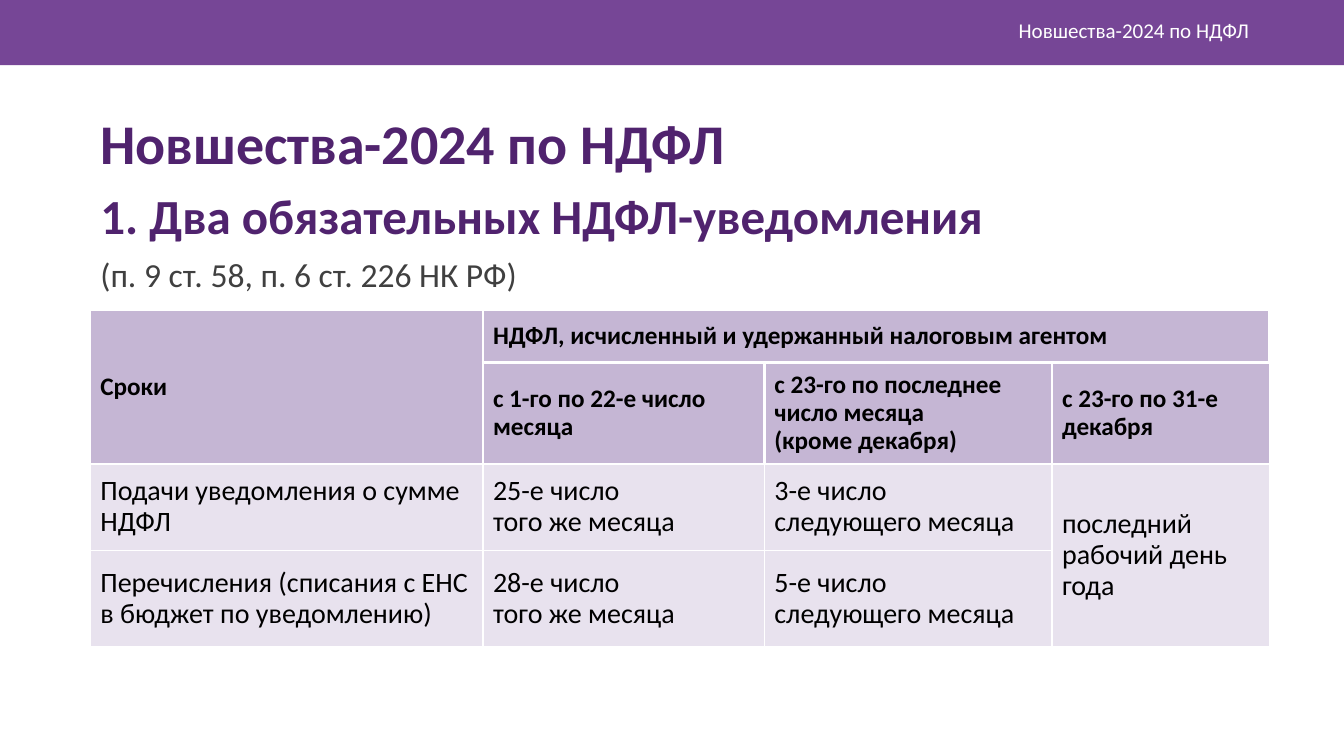
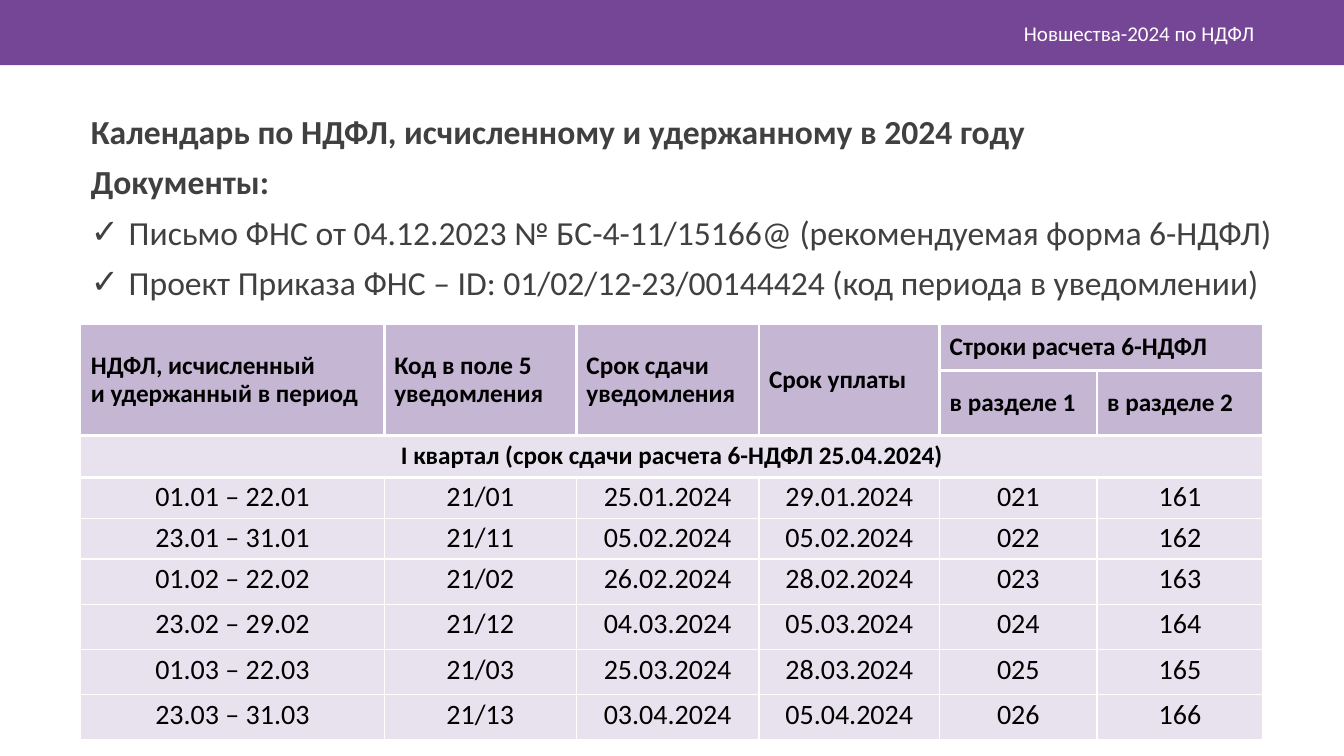
from dataclasses import dataclass

from lxml.etree import SubElement
from pptx import Presentation
from pptx.dml.color import RGBColor
from pptx.enum.shapes import MSO_SHAPE
from pptx.enum.text import MSO_ANCHOR, MSO_AUTO_SIZE, PP_ALIGN
from pptx.oxml.ns import qn
from pptx.util import Pt

PIXEL = 9525


@dataclass(frozen=True)
class TextStyle:
    """Size, colour and weight of one kind of text."""
    size: int
    color: str
    bold: bool = False


@dataclass(frozen=True)
class Theme:
    """Colours, type and line widths shared by the slides."""
    font: str = "Calibri"
    band: str = "764696"
    cell: str = "8D6FAB"
    border: str = "FFFFFF"
    header_opacity: int = 50
    body_opacity: int = 20
    thin: float = 1
    thick: float = 2.25
    line_spacing: float = 0.9
    paragraph_gap: int = 10
    running_head: TextStyle = TextStyle(15, "FFFFFF")
    title: TextStyle = TextStyle(40, "50236E", True)
    subtitle: TextStyle = TextStyle(35, "50236E", True)
    text: TextStyle = TextStyle(24, "404040")
    strong: TextStyle = TextStyle(24, "404040", True)
    table_head: TextStyle = TextStyle(18, "000000", True)
    table_body: TextStyle = TextStyle(20, "000000")


@dataclass(frozen=True)
class TableLayout:
    """Geometry and cell roles of one table."""
    left: int
    top: int
    columns: tuple
    rows: tuple
    merges: tuple
    bold_rows: int
    body_anchor: MSO_ANCHOR
    body_align: PP_ALIGN


THEME = Theme()
HEADER_ROWS = 2
HEADING = "Новшества-2024 по НДФЛ"

DEADLINES = (
    ("Сроки", "НДФЛ, исчисленный и удержанный налоговым агентом", "", ""),
    ("", "с 1-го по 22-е число месяца",
     "с 23-го по последнее число месяца\n(кроме декабря)", "с 23-го по 31-е декабря"),
    ("Подачи уведомления о сумме НДФЛ", "25-е число\vтого же месяца",
     "3-е число\vследующего месяца", "последний рабочий день года"),
    ("Перечисления (списания с ЕНС в бюджет по уведомлению)",
     "28-е число\vтого же месяца", "5-е число\vследующего месяца", ""),
)
DEADLINES_LAYOUT = TableLayout(
    86, 296, (374, 268, 274, 207), (49, 97, 82, 92),
    ((0, 0, 1, 0), (0, 1, 0, 3), (2, 3, 3, 3)),
    2, MSO_ANCHOR.MIDDLE, PP_ALIGN.LEFT)

CALENDAR = (
    ("НДФЛ, исчисленный\vи удержанный в период", "Код в поле 5 уведомления",
     "Срок сдачи уведомления", "Срок уплаты", "Строки расчета 6-НДФЛ", ""),
    ("", "", "", "", "в разделе 1", "в разделе 2"),
    ("I квартал (срок сдачи расчета 6-НДФЛ 25.04.2024)", "", "", "", "", ""),
    ("01.01 – 22.01", "21/01", "25.01.2024", "29.01.2024", "021", "161"),
    ("23.01 – 31.01", "21/11", "05.02.2024", "05.02.2024", "022", "162"),
    ("01.02 – 22.02", "21/02", "26.02.2024", "28.02.2024", "023", "163"),
    ("23.02 – 29.02", "21/12", "04.03.2024", "05.03.2024", "024", "164"),
    ("01.03 – 22.03", "21/03", "25.03.2024", "28.03.2024", "025", "165"),
    ("23.03 – 31.03", "21/13", "03.04.2024", "05.04.2024", "026", "166"),
)
CALENDAR_LAYOUT = TableLayout(
    77, 309, (289, 183, 174, 172, 150, 158), (44, 37, 40, 39, 39, 43, 43, 43, 43),
    (*((0, column, 1, column) for column in range(4)), (0, 4, 0, 5), (2, 0, 2, 5)),
    3, MSO_ANCHOR.TOP, PP_ALIGN.CENTER)


def px(*lengths):
    """Turn pixel lengths into EMU."""
    return [length * PIXEL for length in lengths]


def apply_format(target, **values):
    """Set several attributes of one object."""
    for name, value in values.items():
        setattr(target, name, value)


def format_paragraph(paragraph, style, **values):
    """Give a paragraph its spacing and its runs their type."""
    apply_format(paragraph, **values)
    for run in paragraph.runs:
        apply_format(run.font, name=THEME.font, size=Pt(style.size), bold=style.bold)
        run.font.color.rgb = RGBColor.from_string(style.color)


def set_bullet(paragraph, bulleted):
    """Switch the check mark of a paragraph on or off."""
    properties = paragraph._p.get_or_add_pPr()
    indent = 36 * PIXEL if bulleted else 0
    properties.set("marL", str(indent))
    properties.set("indent", str(-indent))
    if bulleted:
        SubElement(properties, qn("a:buFont"), typeface=THEME.font)
        SubElement(properties, qn("a:buChar"), char="✓")
    else:
        SubElement(properties, qn("a:buNone"))


def fill_placeholder(shape, box, lines):
    """Place a placeholder and write its styled lines."""
    apply_format(shape, **dict(zip(("left", "top", "width", "height"), px(*box))))
    frame = shape.text_frame
    apply_format(frame, word_wrap=True, auto_size=MSO_AUTO_SIZE.NONE,
                 vertical_anchor=MSO_ANCHOR.TOP)
    frame.text = "\n".join(text for text, style, bulleted in lines)
    for index, (text, style, bulleted) in enumerate(lines):
        paragraph = frame.paragraphs[index]
        set_bullet(paragraph, bulleted)
        format_paragraph(paragraph, style, alignment=PP_ALIGN.LEFT,
                         line_spacing=THEME.line_spacing,
                         space_before=Pt(THEME.paragraph_gap if index else 0))


def add_band(slide):
    """Draw the band along the top edge."""
    band = slide.shapes.add_shape(MSO_SHAPE.RECTANGLE, *px(0, 0, 1280, 62))
    band.shadow.inherit = False
    band.fill.solid()
    band.fill.fore_color.rgb = RGBColor.from_string(THEME.band)
    band.line.fill.background()


def add_running_head(slide, left, top):
    """Write the topic at the right of the band."""
    frame = slide.shapes.add_textbox(*px(left, top, 852, 38)).text_frame
    apply_format(frame, word_wrap=True, vertical_anchor=MSO_ANCHOR.MIDDLE, text=HEADING)
    format_paragraph(frame.paragraphs[0], THEME.running_head, alignment=PP_ALIGN.RIGHT)


def paint_cell(cell, widths, opacity):
    """Draw the borders and the translucent fill of a cell."""
    properties = cell._tc.get_or_add_tcPr()
    for side, width in widths.items():
        line = SubElement(properties, qn(f"a:ln{side}"), w=str(Pt(width)))
        SubElement(SubElement(line, qn("a:solidFill")), qn("a:srgbClr"), val=THEME.border)
    cell.fill.solid()
    cell.fill.fore_color.rgb = RGBColor.from_string(THEME.cell)
    color = properties.find(qn("a:solidFill"))[0]
    SubElement(color, qn("a:alpha"), val=str(opacity * 1000))


def border_widths(row, column, layout):
    """Make inner borders of the bold rows thick and all others thin."""
    bold = row < layout.bold_rows
    thick_sides = {
        "L": bold and column > 0,
        "R": bold and column < len(layout.columns) - 1,
        "T": 0 < row <= layout.bold_rows,
        "B": bold,
    }
    return {side: THEME.thick if thick else THEME.thin for side, thick in thick_sides.items()}


def add_grid(slide, layout, content):
    """Add a table with header rows and merged cells."""
    table = slide.shapes.add_table(
        len(layout.rows), len(layout.columns),
        *px(layout.left, layout.top, sum(layout.columns), sum(layout.rows))).table
    apply_format(table, first_row=False, horz_banding=False)
    for column, width in zip(table.columns, px(*layout.columns)):
        column.width = width
    for row, height in zip(table.rows, px(*layout.rows)):
        row.height = height
    for row, texts in enumerate(content):
        header, bold = row < HEADER_ROWS, row < layout.bold_rows
        style = THEME.table_head if bold else THEME.table_body
        for column, text in enumerate(texts):
            cell = table.cell(row, column)
            apply_format(cell, text=text,
                         vertical_anchor=MSO_ANCHOR.MIDDLE if bold else layout.body_anchor)
            for paragraph in cell.text_frame.paragraphs:
                format_paragraph(paragraph, style, line_spacing=THEME.line_spacing,
                                 alignment=PP_ALIGN.LEFT if header else layout.body_align)
            paint_cell(cell, border_widths(row, column, layout),
                       THEME.header_opacity if header else THEME.body_opacity)
    for top, left, bottom, right in layout.merges:
        table.cell(top, left).merge(table.cell(bottom, right))


def add_content_slide(presentation, head, title_box, title, body_box, body, layout, content):
    """Add a slide with a band, running head, title, body text and table."""
    slide = presentation.slides.add_slide(presentation.slide_layouts[1])
    add_band(slide)
    add_running_head(slide, *head)
    fill_placeholder(slide.shapes.title, title_box, [(*title, False)])
    fill_placeholder(slide.placeholders[1], body_box, body)
    add_grid(slide, layout, content)


def main():
    """Build and save the presentation."""
    presentation = Presentation()
    apply_format(presentation, slide_width=1280 * PIXEL, slide_height=720 * PIXEL)
    add_content_slide(
        presentation, (347, 10),
        (86, 106, 1166, 68), (HEADING, THEME.title),
        (86, 178, 1166, 116), [
            ("1. Два обязательных НДФЛ-уведомления", THEME.subtitle, False),
            ("(п. 9 ст. 58, п. 6 ст. 226 НК РФ)", THEME.text, False),
        ], DEADLINES_LAYOUT, DEADLINES)
    add_content_slide(
        presentation, (352, 13),
        (77, 105, 1154, 46),
        ("Календарь по НДФЛ, исчисленному и удержанному в 2024 году", THEME.strong),
        (77, 153, 1154, 155), [
            ("Документы:", THEME.strong, False),
            ("Письмо ФНС от 04.12.2023 № БС-4-11/15166@ (рекомендуемая форма 6-НДФЛ)",
             THEME.text, True),
            ("Проект Приказа ФНС – ID: 01/02/12-23/00144424 (код периода в уведомлении)",
             THEME.text, True),
        ], CALENDAR_LAYOUT, CALENDAR)
    presentation.save("out.pptx")


if __name__ == "__main__":
    main()
